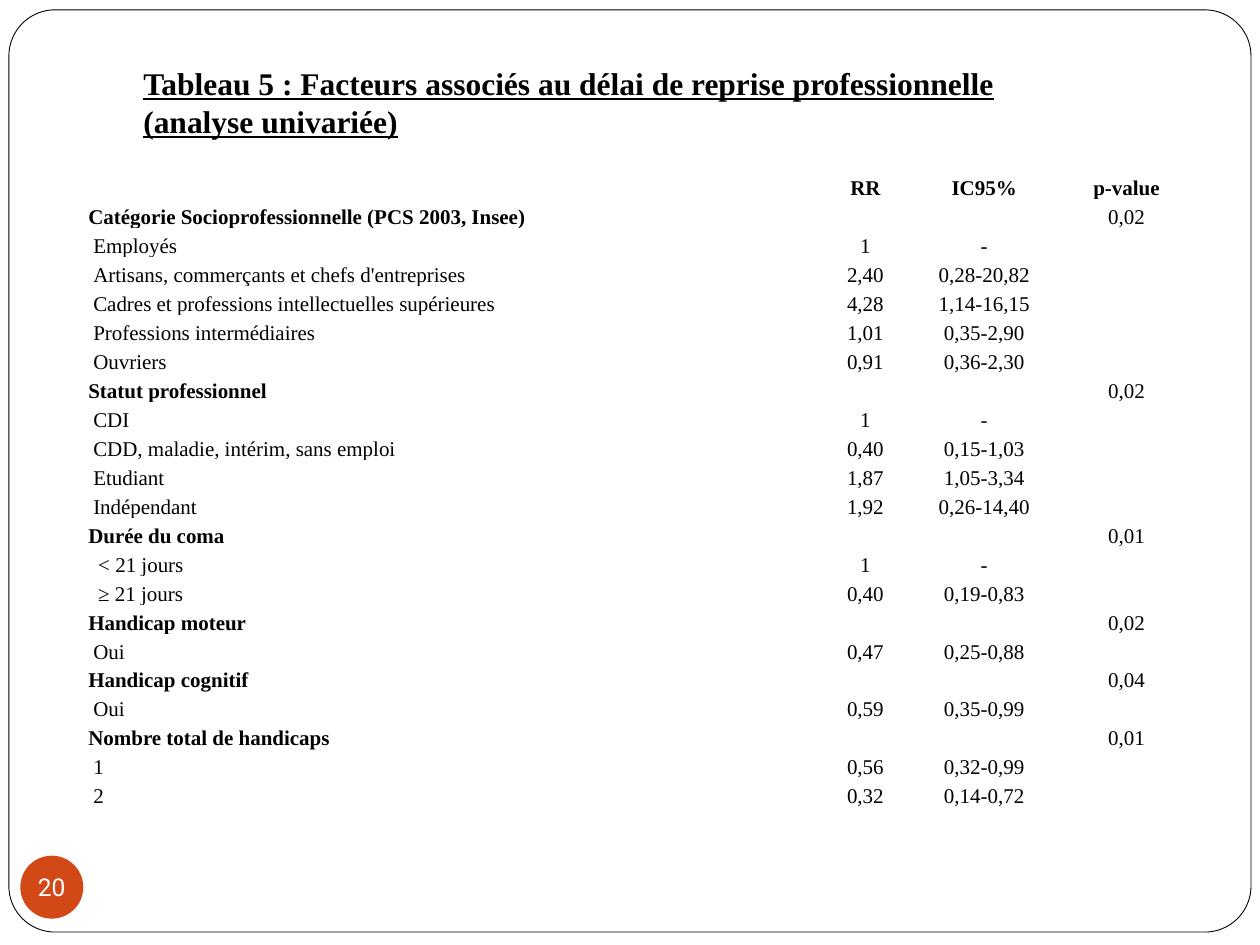
from dataclasses import dataclass

from lxml import etree
from pptx import Presentation
from pptx import util as u
from pptx.dml.color import RGBColor
from pptx.enum import shapes, text
from pptx.oxml import ns

BLACK = RGBColor(0x00, 0x00, 0x00)
WHITE = RGBColor(0xFF, 0xFF, 0xFF)
ORANGE = RGBColor(0xD3, 0x48, 0x17)
SERIF = "Times New Roman"
TABLE_SIZE = u.Pt(12)
INSET = 0.1
COLUMN_WIDTHS = (14.94, 1.65, 3.14, 2.6)
TABLE_HEIGHT = 12.85


@dataclass(frozen=True)
class Row:
    label: str
    ratio: str = ""
    interval: str = ""
    p_value: str = ""
    indent: int = 0
    bold_values: bool = False

    @property
    def values(self) -> tuple[str, ...]:
        return self.label, self.ratio, self.interval, self.p_value


def factor(label: str, p_value: str) -> Row:
    return Row(label, p_value=p_value)


def level(label: str, ratio: str, interval: str, indent: int = 1) -> Row:
    return Row(label, ratio, interval, indent=indent)


ROWS = (
    Row("", "RR", "IC95%", "p-value", bold_values=True),
    factor("Catégorie Socioprofessionnelle (PCS 2003, Insee)", "0,02"),
    level("Employés", "1", "-"),
    level("Artisans, commerçants et chefs d'entreprises", "2,40", "0,28-20,82"),
    level("Cadres et professions intellectuelles supérieures", "4,28", "1,14-16,15"),
    level("Professions intermédiaires", "1,01", "0,35-2,90"),
    level("Ouvriers", "0,91", "0,36-2,30"),
    factor("Statut professionnel", "0,02"),
    level("CDI", "1", "-"),
    level("CDD, maladie, intérim, sans emploi", "0,40", "0,15-1,03"),
    level("Etudiant", "1,87", "1,05-3,34"),
    level("Indépendant", "1,92", "0,26-14,40"),
    factor("Durée du coma", "0,01"),
    level("< 21 jours", "1", "-", indent=2),
    level("≥ 21 jours", "0,40", "0,19-0,83", indent=2),
    factor("Handicap moteur", "0,02"),
    level("Oui", "0,47", "0,25-0,88"),
    factor("Handicap cognitif", "0,04"),
    level("Oui", "0,59", "0,35-0,99"),
    factor("Nombre total de handicaps", "0,01"),
    level("1", "0,56", "0,32-0,99"),
    level("2", "0,32", "0,14-0,72"),
)


def format_spans(para, font: str, size: int, color: RGBColor, bold: bool = False,
                 underline: bool = False) -> None:
    for span in para.runs:
        span.font.name = font
        span.font.size = size
        span.font.color.rgb = color
        span.font.bold = bold
        span.font.underline = underline


def add_frame(page) -> None:
    frame = page.shapes.add_shape(shapes.MSO_SHAPE.ROUNDED_RECTANGLE,
                                  u.Cm(0.18), u.Cm(0.2), u.Cm(25.04), u.Cm(18.59))
    frame.adjustments[0] = 0.05
    frame.shadow.inherit = False
    frame.fill.solid()
    frame.fill.fore_color.rgb = WHITE
    frame.line.color.rgb = BLACK
    frame.line.width = u.Pt(0.5)


def add_page_number(page, number: str) -> None:
    badge = page.shapes.add_shape(shapes.MSO_SHAPE.OVAL,
                                  u.Cm(0.41), u.Cm(17.25), u.Cm(1.27), u.Cm(1.27))
    badge.shadow.inherit = False
    badge.fill.solid()
    badge.fill.fore_color.rgb = ORANGE
    badge.line.fill.background()
    box = badge.text_frame
    box.text = number
    box.word_wrap = False
    box.vertical_anchor = text.MSO_ANCHOR.MIDDLE
    box.margin_left = box.margin_right = box.margin_top = box.margin_bottom = 0
    box.paragraphs[0].alignment = text.PP_ALIGN.CENTER
    format_spans(box.paragraphs[0], "Roboto", u.Pt(14), WHITE)


def add_title(page, title: str) -> None:
    box = page.shapes.add_textbox(u.Cm(2.64), u.Cm(1.17), u.Cm(20.6), u.Cm(1.8)).text_frame
    box.word_wrap = True
    box.text = title
    for para in box.paragraphs:
        format_spans(para, SERIF, u.Pt(18), BLACK, bold=True, underline=True)


def fill_cell(cell, value: str, indent: int, centred: bool, bold: bool) -> None:
    cell.fill.background()
    cell.vertical_anchor = text.MSO_ANCHOR.BOTTOM
    cell.margin_left = u.Cm(INSET * (1 + indent))
    cell.margin_right = u.Cm(INSET)
    cell.margin_top = cell.margin_bottom = 0
    para = cell.text_frame.paragraphs[0]
    para.line_spacing = 1.06
    para.alignment = text.PP_ALIGN.CENTER if centred else text.PP_ALIGN.LEFT
    if value:
        para.text = value
        format_spans(para, SERIF, TABLE_SIZE, BLACK, bold)
    else:
        # An empty cell needs its own text size to keep the row low
        end = etree.SubElement(para._p, ns.qn("a:endParaRPr"))
        end.set("sz", str(int(TABLE_SIZE.pt * 100)))


def add_factor_table(page) -> None:
    grid = page.shapes.add_table(len(ROWS), len(COLUMN_WIDTHS), u.Cm(1.68), u.Cm(3.45),
                                 u.Cm(sum(COLUMN_WIDTHS)), u.Cm(TABLE_HEIGHT)).table
    grid.first_row = False
    grid.horz_banding = False
    for column, width in zip(grid.columns, COLUMN_WIDTHS):
        column.width = u.Cm(width)
    for r, row in enumerate(ROWS):
        for c, value in enumerate(row.values):
            is_label = c == 0
            bold = row.indent == 0 if is_label else row.bold_values
            fill_cell(grid.cell(r, c), value, row.indent if is_label else 0,
                      not is_label, bold)


def main() -> None:
    deck = Presentation()
    deck.slide_width, deck.slide_height = u.Cm(25.4), u.Cm(19.05)
    page = deck.slides.add_slide(deck.slide_layouts[6])

    # Background frame and page number
    add_frame(page)
    add_page_number(page, "20")

    # Title and table
    add_title(page, "Tableau 5 : Facteurs associés au délai de reprise professionnelle\n"
                    "(analyse univariée)")
    add_factor_table(page)

    deck.save("out.pptx")


if __name__ == "__main__":
    main()
